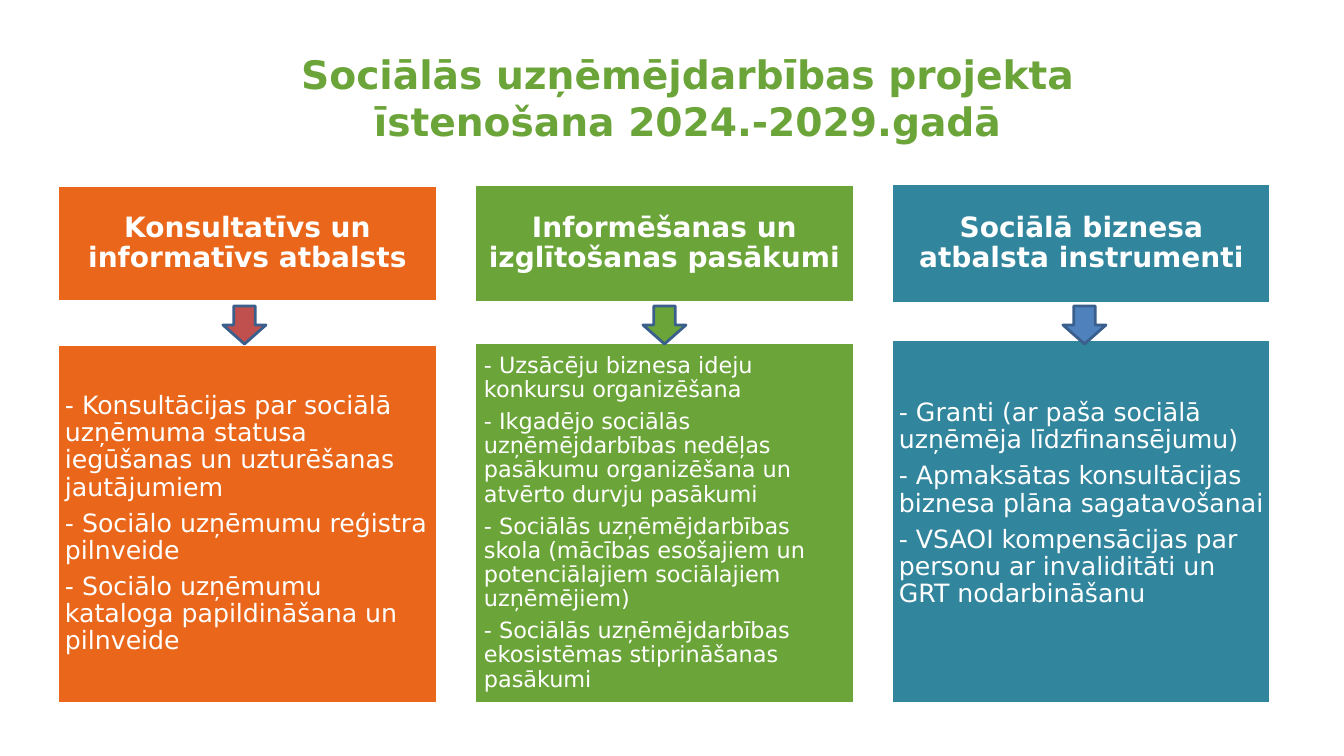
from pptx import Presentation
from pptx.dml.color import RGBColor
from pptx.enum.shapes import MSO_SHAPE
from pptx.enum.text import MSO_ANCHOR, PP_ALIGN
from pptx.util import Pt

TITLE = "Sociālās uzņēmējdarbības projekta īstenošana 2024.-2029.gadā"
COLUMNS = [
    dict(head="Konsultatīvs un informatīvs atbalsts",
         items=["- Konsultācijas par sociālā uzņēmuma statusa iegūšanas un uzturēšanas jautājumiem",
                "- Sociālo uzņēmumu reģistra pilnveide",
                "- Sociālo uzņēmumu kataloga papildināšana un pilnveide"],
         fill="E9661A", arrow="C0504D", line=2, size=18, top=345, pad=(8, 7), lift=0),
    dict(head="Informēšanas un izglītošanas pasākumi",
         items=["- Uzsācēju biznesa ideju konkursu organizēšana",
                "- Ikgadējo sociālās uzņēmējdarbības nedēļas pasākumu organizēšana un atvērto durvju pasākumi",
                "- Sociālās uzņēmējdarbības skola (mācības esošajiem un potenciālajiem sociālajiem uzņēmējiem)",
                "- Sociālās uzņēmējdarbības ekosistēmas stiprināšanas pasākumi"],
         fill="6BA539", arrow="6BA539", line=1.5, size=16, top=343, pad=(9, 9), lift=0),
    dict(head="Sociālā biznesa atbalsta instrumenti",
         items=["- Granti (ar paša sociālā uzņēmēja līdzfinansējumu)",
                "- Apmaksātas konsultācijas biznesa plāna sagatavošanai",
                "- VSAOI kompensācijas par personu ar invaliditāti un GRT nodarbināšanu"],
         fill="31859C", arrow="4F81BD", line=2, size=18, top=340, pad=(8, 7), lift=35),
]
FONT = "DejaVu Sans"
LEFT, STEP, WIDTH, BOTTOM = 58, 417, 379, 703
WHITE = "FFFFFF"


def px(n):
    """Turn slide pixels into EMU."""
    return round(n * 12192000 / 1344)


def rgb(code):
    """Turn a hex string into a colour."""
    return RGBColor.from_string(code)


def write(para, text, size, color, bold=False):
    """Add one formatted run to a paragraph."""
    run = para.add_run()
    run.text = text
    font = run.font
    font.name, font.size, font.bold = FONT, Pt(size), bold
    font.color.rgb = rgb(color)


def draw(kind, box, fill, line, width):
    """Add a flat preset shape."""
    shape = slide.shapes.add_shape(kind, *map(px, box))
    shape.shadow.inherit = False
    shape.fill.solid()
    shape.fill.fore_color.rgb = rgb(fill)
    shape.line.color.rgb = rgb(line)
    shape.line.width = Pt(width)
    return shape


def panel(box, col, lines, size, align, bold, pad, lift=0):
    """Add a coloured box with its paragraphs."""
    frame = draw(MSO_SHAPE.RECTANGLE, box, col["fill"], WHITE, col["line"]).text_frame
    frame.word_wrap = True
    frame.vertical_anchor = MSO_ANCHOR.MIDDLE
    frame.margin_left = frame.margin_right = frame.margin_top = px(pad)
    frame.margin_bottom = px(pad + lift)
    for i, text in enumerate(lines):
        para = frame.add_paragraph() if i else frame.paragraphs[0]
        para.alignment = align
        para.line_spacing = 0.9
        para.space_after = Pt(size * 0.35)
        write(para, text, size, WHITE, bold)


deck = Presentation()
deck.slide_width, deck.slide_height = px(1344), px(756)
slide = deck.slides.add_slide(deck.slide_layouts[5])

title = slide.shapes.title
title.left, title.top, title.width, title.height = map(px, (193, 45, 989, 105))
title.text_frame.word_wrap = True
title.text_frame.vertical_anchor = MSO_ANCHOR.TOP
title.text_frame.paragraphs[0].alignment = PP_ALIGN.CENTER
write(title.text_frame.paragraphs[0], TITLE, 28, "6BA439", True)

for i, col in enumerate(COLUMNS):
    x = LEFT + i * STEP
    top = col["top"]
    panel((x, 186 - i, WIDTH, 115 + 2 * i), col, [col["head"]], 20,
          PP_ALIGN.CENTER, True, col["pad"][0])
    panel((x, top, WIDTH, BOTTOM - top), col, col["items"], col["size"],
          PP_ALIGN.LEFT, False, col["pad"][1], col["lift"])
    draw(MSO_SHAPE.DOWN_ARROW, (223 + i * 420, 306, 43, 38), col["arrow"], "3A5F8C", 2)

deck.save("out.pptx")
